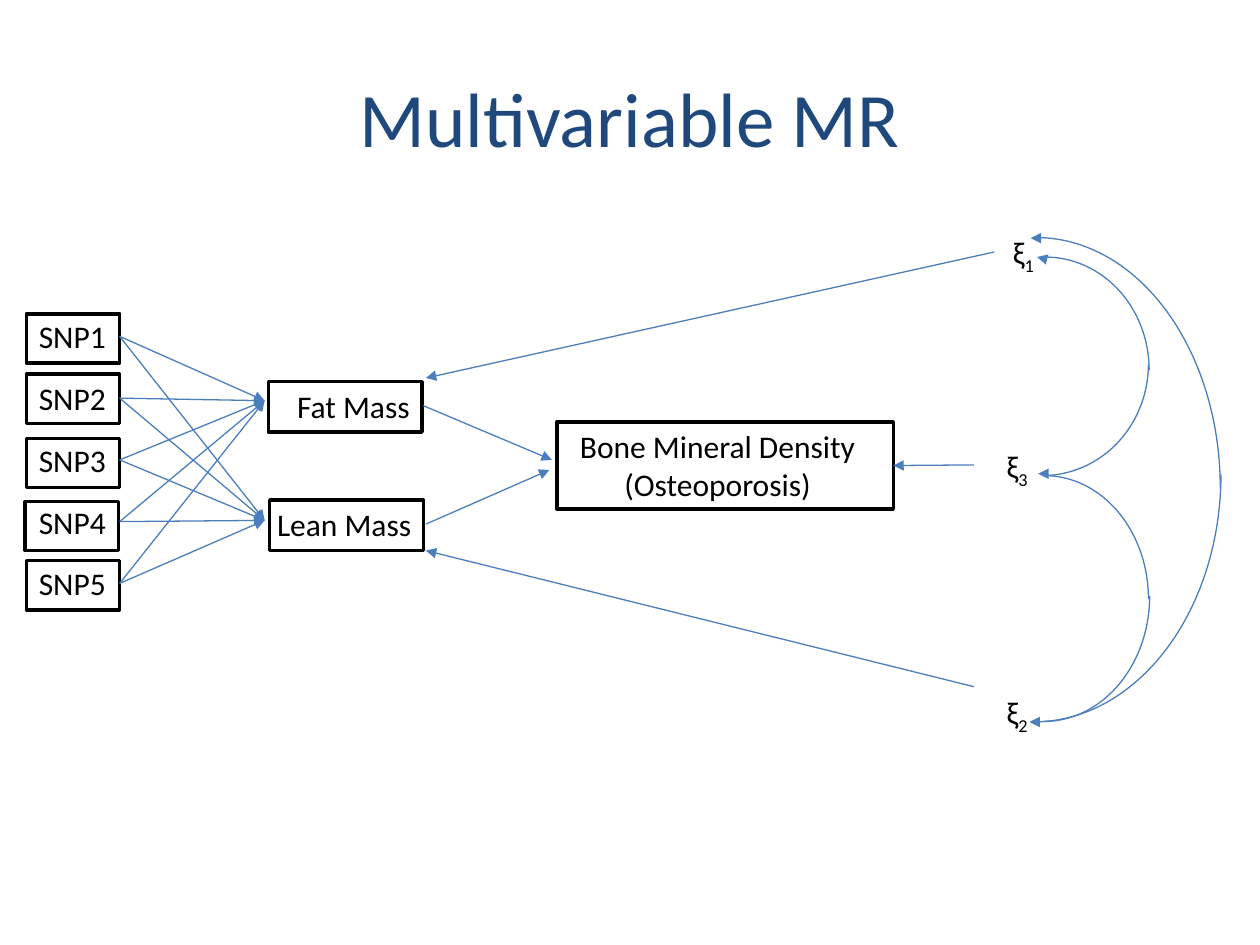
"""Build the Multivariable MR path diagram slide."""

import itertools
from dataclasses import dataclass
from typing import Optional

import lxml.etree
import pptx
import pptx.dml.color
import pptx.enum.shapes
import pptx.enum.text
import pptx.oxml.ns
import pptx.util

Inches = pptx.util.Inches
Pt = pptx.util.Pt
RGBColor = pptx.dml.color.RGBColor
Align = pptx.enum.text.PP_ALIGN
LEFT_SIDE, RIGHT_SIDE = 1, 3


@dataclass(frozen=True)
class Theme:
    font: str = "Calibri"
    title_color: RGBColor = RGBColor(0x1F, 0x49, 0x7D)
    text_color: RGBColor = RGBColor(0, 0, 0)
    path_color: RGBColor = RGBColor(0x4B, 0x7E, 0xBC)
    title_size: float = 44
    body_size: float = 18
    box_line: float = 2
    path_line: float = 0.75


@dataclass(frozen=True)
class Area:
    left: float
    top: float
    width: float
    height: float

    def lengths(self) -> tuple:
        return tuple(map(Inches, (self.left, self.top, self.width, self.height)))


@dataclass(frozen=True)
class Label:
    area: Area
    lines: tuple
    subscript: str = ""
    alignment: Align = Align.LEFT


@dataclass(frozen=True)
class Arc:
    area: Area
    rotation: int
    flips: tuple = ()


@dataclass(frozen=True)
class Arrow:
    start: tuple
    end: tuple
    source: Optional[object] = None
    target: Optional[object] = None


THEME = Theme()

SNP_LABELS = [
    Label(Area(0.21, 2.47 + 0.49 * index, 0.74, 0.4), (f"SNP{index + 1}",))
    for index in range(5)
]
FAT_LABEL = Label(Area(2.26, 3.02, 1.1, 0.4), ("Fat Mass",))
LEAN_LABEL = Label(Area(2.1, 3.96, 1.28, 0.4), ("Lean Mass",))
OUTCOME_LABEL = Label(
    Area(4.49, 3.34, 2.41, 0.71),
    ("Bone Mineral Density", "(Osteoporosis)"),
    alignment=Align.CENTER,
)
ERROR_LABELS = [
    Label(Area(left, top, 0.38, 0.4), ("ξ",), subscript)
    for left, top, subscript in ((7.94, 1.8, "1"), (7.89, 5.45, "2"), (7.89, 3.5, "3"))
]

SNP_BOXES = [
    Area(left, top, 0.74, 0.39)
    for left, top in ((0.21, 2.49), (0.21, 2.97), (0.21, 3.48), (0.2, 3.98), (0.21, 4.45))
]
EXPOSURE_BOXES = [Area(2.13, 3.03, 1.22, 0.4), Area(2.14, 3.97, 1.22, 0.4)]
OUTCOME_BOX = Area(4.42, 3.35, 2.67, 0.69)

ERROR_ARCS = [
    Arc(Area(6.24, 2.28, 3.93, 2.97), 90),
    Arc(Area(6.24, 2.41, 3.97, 2.92), 90, ("flipH",)),
    Arc(Area(7.29, 3.89, 1.99, 1.68), 270, ("flipH", "flipV")),
    Arc(Area(7.31, 3.93, 1.96, 1.65), 270, ("flipV",)),
    Arc(Area(7.39, 2.05, 1.77, 1.68), 270, ("flipH", "flipV")),
    Arc(Area(7.4, 2.11, 1.79, 1.65), 270, ("flipV",)),
]
EXPOSURE_TARGETS = [(2.1, 3.18), (2.1, 4.13)]
ERROR_ARROWS = [Arrow((7.89, 2), (3.38, 3)), Arrow((7.73, 5.45), (3.38, 4.37))]
ARC_TIPS = [
    Arrow((8.27, 2.05), (8.23, 2.04)),
    Arrow((8.22, 1.89), (8.18, 1.89)),
    Arrow((8.28, 3.76), (8.24, 3.76)),
    Arrow((8.21, 5.73), (8.17, 5.73)),
]


def add_label(slide, label: Label):
    text_box = slide.shapes.add_textbox(*label.area.lengths())
    frame = text_box.text_frame
    frame.word_wrap = False
    frame.auto_size = pptx.enum.text.MSO_AUTO_SIZE.SHAPE_TO_FIT_TEXT
    frame.text = "\n".join(label.lines)
    for paragraph in frame.paragraphs:
        paragraph.alignment = label.alignment
        paragraph.font.name = THEME.font
        paragraph.font.size = Pt(THEME.body_size)
        paragraph.font.color.rgb = THEME.text_color
    if label.subscript:
        run = frame.paragraphs[0].add_run()
        run.text = label.subscript
        run.font._element.set("baseline", "-25000")
    return text_box


def add_title(slide, text: str) -> None:
    frame = slide.shapes.add_textbox(*Area(0.5, 0.3, 9, 1.25).lengths()).text_frame
    frame.word_wrap = True
    frame.vertical_anchor = pptx.enum.text.MSO_ANCHOR.MIDDLE
    frame.text = text
    paragraph = frame.paragraphs[0]
    paragraph.alignment = Align.CENTER
    paragraph.font.name = THEME.font
    paragraph.font.size = Pt(THEME.title_size)
    paragraph.font.color.rgb = THEME.title_color


def add_outline(slide, kind, area: Area, color: RGBColor, width: float):
    shape = slide.shapes.add_shape(kind, *area.lengths())
    shape.shadow.inherit = False
    shape.fill.background()
    shape.line.color.rgb = color
    shape.line.width = Pt(width)
    return shape


def add_box(slide, area: Area):
    kind = pptx.enum.shapes.MSO_SHAPE.RECTANGLE
    return add_outline(slide, kind, area, THEME.text_color, THEME.box_line)


def add_arc(slide, arc: Arc) -> None:
    kind = pptx.enum.shapes.MSO_SHAPE.ARC
    shape = add_outline(slide, kind, arc.area, THEME.path_color, THEME.path_line)
    shape.rotation = arc.rotation
    for flip in arc.flips:
        shape.element.spPr.xfrm.set(flip, "1")


def add_arrow(slide, arrow: Arrow) -> None:
    connector = slide.shapes.add_connector(
        pptx.enum.shapes.MSO_CONNECTOR.STRAIGHT, *map(Inches, arrow.start + arrow.end)
    )
    if arrow.source is not None:
        connector.begin_connect(arrow.source, RIGHT_SIDE)
    if arrow.target is not None:
        connector.end_connect(arrow.target, RIGHT_SIDE)
    connector.line.color.rgb = THEME.path_color
    connector.line.width = Pt(THEME.path_line)
    qualify = pptx.oxml.ns.qn
    line = connector.line._get_or_add_ln()
    lxml.etree.SubElement(line, qualify("a:tailEnd"), type="triangle")
    lxml.etree.SubElement(connector.element.spPr, qualify("a:effectLst"))


def main() -> None:
    presentation = pptx.Presentation()
    presentation.slide_width, presentation.slide_height = Inches(10), Inches(7.5)
    slide = presentation.slides.add_slide(presentation.slide_layouts[6])

    add_title(slide, "Multivariable MR")
    snps = [add_label(slide, label) for label in SNP_LABELS]
    fat, lean = add_label(slide, FAT_LABEL), add_label(slide, LEAN_LABEL)
    for label in (OUTCOME_LABEL, *ERROR_LABELS):
        add_label(slide, label)
    for area in SNP_BOXES + EXPOSURE_BOXES:
        add_box(slide, area)
    outcome = add_box(slide, OUTCOME_BOX)
    for arc in ERROR_ARCS:
        add_arc(slide, arc)

    snp_arrows = [
        Arrow((0.95, 2.67), target, source=snp)
        for snp, target in itertools.product(snps, EXPOSURE_TARGETS)
    ]
    outcome_arrows = [
        Arrow((3.36, 3.22), (4.38, 3.65), source=fat),
        Arrow((3.38, 4.16), (4.36, 3.73), source=lean),
        Arrow((7.73, 3.69), (7.09, 3.69), target=outcome),
    ]
    for arrow in snp_arrows + outcome_arrows + ERROR_ARROWS + ARC_TIPS:
        add_arrow(slide, arrow)
    presentation.save("out.pptx")


if __name__ == "__main__":
    main()
